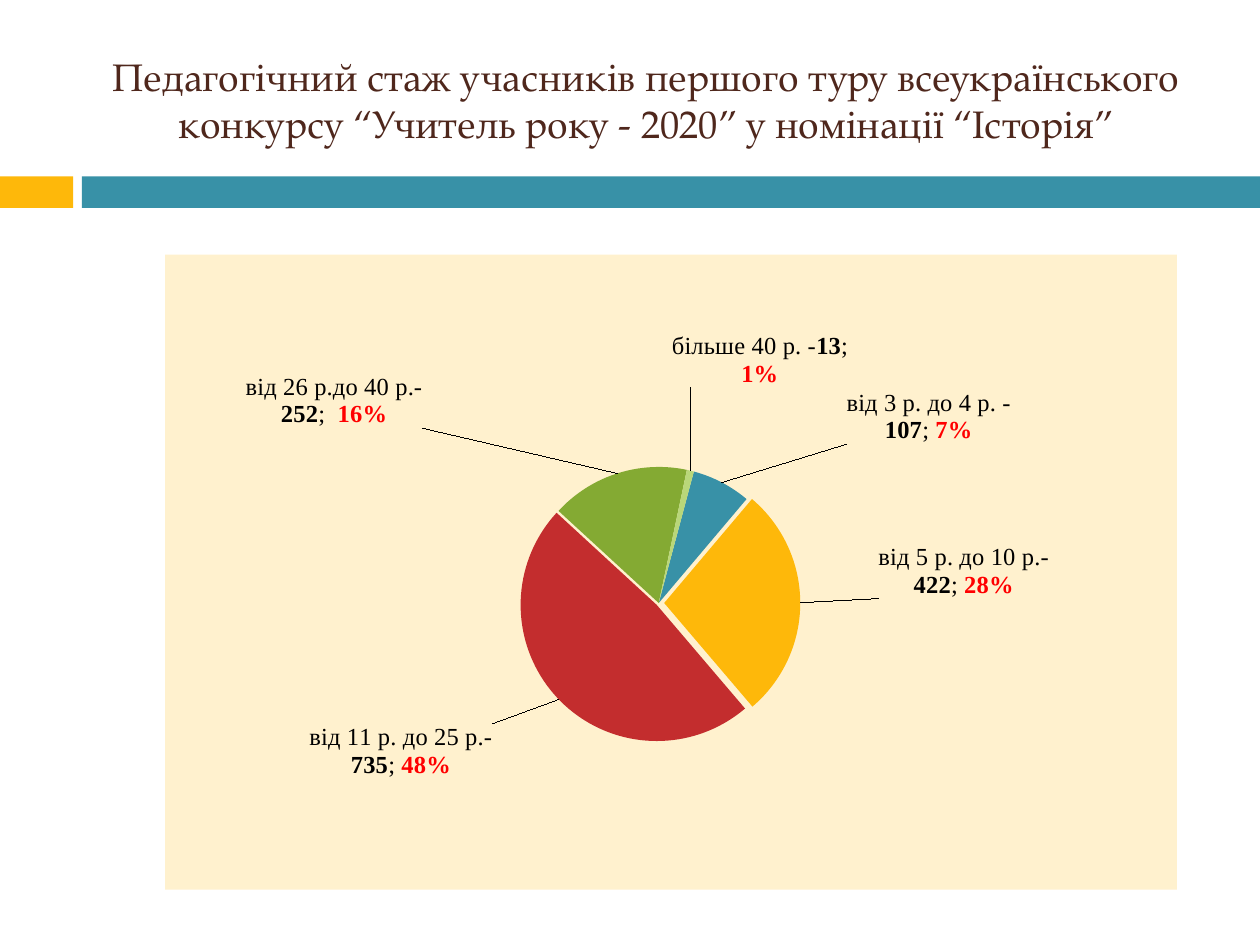
"""Build a slide with a pie chart of the contestants' teaching experience."""
import pptx
import pptx.chart.data
import pptx.dml.color
import pptx.enum.chart
import pptx.enum.shapes
import pptx.enum.text
import pptx.oxml
import pptx.oxml.ns
import pptx.util

Inches = pptx.util.Inches
Pt = pptx.util.Pt
qn = pptx.oxml.ns.qn

TITLE = ("Педагогічний стаж учасників першого туру всеукраїнського "
         "конкурсу “Учитель року - 2020” у номінації “Історія”")
GROUPS = [
    dict(name="від 3 до 4 рр. ", value=107, fill="3891A7", explode=0, shift=(0.12, -0.05),
         label=("від 3 р. до 4 р. - ", "107", "; ", "7%")),
    dict(name="від 5 до 10 рр.", value=422, fill="FEB80A", explode=4, shift=(0.07, -0.05),
         label=("від 5 р. до 10 р.- ", "422", "; ", "28%")),
    dict(name="від 11 до 25 рр.", value=735, fill="C32D2E", explode=2, shift=(-0.06, 0.03),
         label=("від 11 р. до 25 р.- ", "735", "; ", "48%")),
    dict(name="від 26 до 40 рр.", value=252, fill="84AA33", explode=0, shift=(-0.19, -0.06),
         label=("від 26 р.до 40 р.- ", "252", ";  ", "16%")),
    dict(name="більше 40", value=13, fill="B9D77A", explode=0, shift=(-0.02, -0.12),
         label=("більше 40 р. -", "13", "; ", "1%")),
]
LABEL_STYLES = [("000000", False), ("000000", True), ("000000", False), ("FF0000", True)]


def rgb(color):
    """Return a hex string as a colour."""
    return pptx.dml.color.RGBColor.from_string(color)


def chart_xml(tag, inner="", val=None):
    """Return a new element of the chart namespace."""
    attr = "" if val is None else f' val="{val}"'
    ns = pptx.oxml.ns.nsdecls("c", "a")
    return pptx.oxml.parse_xml(f"<c:{tag} {ns}{attr}>{inner}</c:{tag}>")


def layout_xml(**values):
    """Return a manual layout with the given values."""
    inner = "".join(f'<c:{key} val="{value}"/>' for key, value in values.items())
    return chart_xml("layout", f"<c:manualLayout>{inner}</c:manualLayout>")


def format_font(font, color, **values):
    """Set the colour and other attributes of a font."""
    font.color.rgb = rgb(color)
    for key, value in values.items():
        setattr(font, key, value)


def add_title(s):
    """Place and fill the title."""
    sp = s.shapes.title
    place = dict(left=0.67, top=0.25, width=8.92, height=1.08)
    for key, value in place.items():
        setattr(sp, key, Inches(value))
    tf = sp.text_frame
    tf.vertical_anchor = pptx.enum.text.MSO_ANCHOR.MIDDLE
    p = tf.paragraphs[0]
    p.alignment = pptx.enum.text.PP_ALIGN.CENTER
    r = p.add_run()
    r.text = TITLE
    format_font(r.font, "4F271C", size=Pt(22), name="TeX Gyre Pagella")


def add_bar(s, left, width, color):
    """Add a piece of the band under the title."""
    sp = s.shapes.add_shape(pptx.enum.shapes.MSO_SHAPE.RECTANGLE,
                            Inches(left), Inches(1.4), Inches(width), Inches(0.25))
    sp.shadow.inherit = False
    sp.fill.solid()
    sp.fill.fore_color.rgb = rgb(color)
    sp.line.fill.background()


def format_slice(point, group):
    """Colour, offset and label one slice."""
    point.format.fill.solid()
    point.format.fill.fore_color.rgb = rgb(group["fill"])
    label = point.data_label
    tf = label.text_frame
    tf.word_wrap = True
    p = tf.paragraphs[0]
    for text, (color, bold) in zip(group["label"], LABEL_STYLES):
        r = p.add_run()
        r.text = text
        format_font(r.font, color, size=Pt(14), name="Times New Roman", bold=bold)
    label.position = pptx.enum.chart.XL_LABEL_POSITION.BEST_FIT


def arrange_slices(series):
    """Pull the slices apart and move their labels."""
    ser = series._element
    slices = ser.findall(qn("c:dPt"))
    slices[0].addprevious(chart_xml("explosion", val=25))
    labels = ser.findall(f"{qn('c:dLbls')}/{qn('c:dLbl')}")
    for group, dpt, dlbl in zip(GROUPS, slices, labels):
        dpt.find(qn("c:spPr")).addprevious(chart_xml("explosion", val=group["explode"]))
        x, y = group["shift"]
        dlbl.find(qn("c:idx")).addnext(layout_xml(x=x, y=y))
        for tag in ("c:showCatName", "c:showPercent"):
            dlbl.find(qn(tag)).set("val", "1")


def arrange_plot(chart):
    """Set the background, the plot area and the first angle."""
    space = chart._chartSpace
    fill = '<a:solidFill><a:srgbClr val="FFF1CE"/></a:solidFill><a:ln><a:noFill/></a:ln>'
    space.find(qn("c:txPr")).addprevious(chart_xml("spPr", fill))
    area = space.find(f"{qn('c:chart')}/{qn('c:plotArea')}")
    for old in area.findall(qn("c:layout")):
        area.remove(old)
    area.insert(0, layout_xml(layoutTarget="inner", xMode="edge", yMode="edge",
                              x=0.205, y=0.281, w=0.566, h=0.536))
    pie = area.find(qn("c:pieChart"))
    for old in pie.findall(qn("c:firstSliceAng")):
        pie.remove(old)
    pie.append(chart_xml("firstSliceAng", val=15))


def add_pie(s):
    """Add the pie chart."""
    data = pptx.chart.data.CategoryChartData()
    data.categories = [group["name"] for group in GROUPS]
    data.add_series("Series 1", [group["value"] for group in GROUPS])
    chart = s.shapes.add_chart(pptx.enum.chart.XL_CHART_TYPE.PIE, Inches(1.31), Inches(2.02),
                               Inches(8.03), Inches(5.04), data).chart
    chart.has_title = chart.has_legend = False
    format_font(chart.font, "000000", size=Pt(10), name="Calibri")
    plot = chart.plots[0]
    plot.vary_by_categories = True
    series = plot.series[0]
    for i, group in enumerate(GROUPS):
        format_slice(series.points[i], group)
    labels = series.data_labels
    options = dict(show_value=True, show_percentage=True, show_category_name=True,
                   position=pptx.enum.chart.XL_LABEL_POSITION.BEST_FIT)
    for key, value in options.items():
        setattr(labels, key, value)
    format_font(labels.font, "000000", size=Pt(14), name="Times New Roman")
    arrange_slices(series)
    arrange_plot(chart)


def main():
    """Build and save the presentation."""
    prs = pptx.Presentation()
    prs.slide_width, prs.slide_height = Inches(10), Inches(7.5)
    s = prs.slides.add_slide(prs.slide_layouts[5])
    add_bar(s, 0, 0.58, "FEB80A")
    add_bar(s, 0.65, 9.35, "3891A7")
    add_title(s)
    add_pie(s)
    prs.save("out.pptx")


if __name__ == "__main__":
    main()
